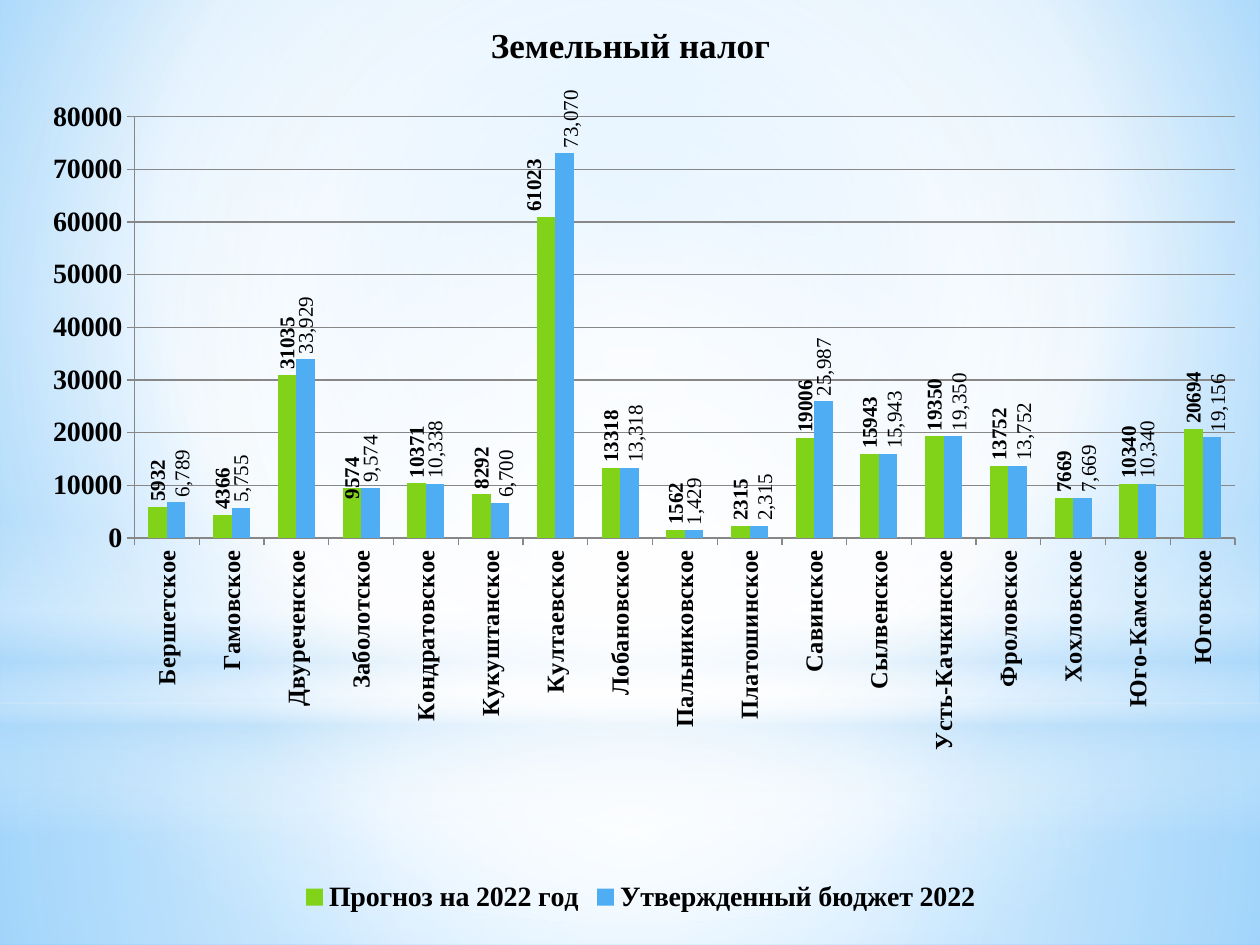
from lxml import etree
from pptx import Presentation, util as u
from pptx.chart.data import CategoryChartData
from pptx.dml.color import RGBColor
from pptx.enum import chart as charts, shapes, text
from pptx.oxml import parse_xml
from pptx.oxml.ns import nsdecls, qn

COLORS = {"ink": "000000", "line": "878787", "forecast": "81D31A", "budget": "4FADF3",
          "white": "FFFFFF", "pale": "B4DCFA", "sky": "9ED5FF", "blue": "5BB9FF"}
CENTER = (50, 50, 50, 50)

SETTLEMENTS = ["Бершетское", "Гамовское", "Двуреченское", "Заболотское", "Кондратовское",
               "Кукуштанское", "Култаевское", "Лобановское", "Пальниковское",
               "Платошинское", "Савинское", "Сылвенское", "Усть-Качкинское",
               "Фроловское", "Хохловское", "Юго-Камское", "Юговское"]
FORECAST = [5932, 4366, 31035, 9574, 10371, 8292, 61023, 13318, 1562, 2315, 19006,
            15943, 19350, 13752, 7669, 10340, 20694]
BUDGET = [6789, 5755, 33929, 9574, 10338, 6700, 73070, 13318, 1429, 2315, 25987,
          15943, 19350, 13752, 7669, 10340, 19156]
# name, values, number format, colour, bold labels, label shifts as shares of the chart
SERIES = [
    ("Прогноз на 2022 год", FORECAST, "0", "forecast", True,
     {3: (0, 0.02), 6: (-0.01, 0)}),
    ("Утвержденный бюджет 2022", BUDGET, "#,##0", "budget", False,
     {i: (0.005, 0) for i in (0, 5, 6, 7, 9, 11, 12, 13, 14, 16)}),
]


def color(name):
    return RGBColor.from_string(COLORS[name])


def set_font(font, size, bold=False, name="Times New Roman", ink="ink"):
    font.size, font.bold, font.name = u.Pt(size), bold, name
    font.color.rgb = color(ink)


def write(box, words, align=text.PP_ALIGN.LEFT, **style):
    box.text_frame.word_wrap = True
    para = box.text_frame.paragraphs[0]
    para.alignment = align
    span = para.add_run()
    span.text = words
    set_font(span.font, **style)


def set_gradient(parent, stops, focus=None):
    """Replace the gradient in parent; focus is the centre of a circular one."""
    marks = "".join(
        f'<a:gs pos="{place * 1000}"><a:srgbClr val="{COLORS[name]}">'
        f'<a:alpha val="{alpha * 1000}"/></a:srgbClr></a:gs>'
        for place, name, alpha in stops)
    if focus:
        sides = " ".join(f'{side}="{share * 1000}"' for side, share in zip("ltrb", focus))
        way = f'<a:path path="circle"><a:fillToRect {sides}/></a:path>'
    else:
        way = '<a:lin ang="5400000" scaled="0"/>'
    old = parent.find(qn("a:gradFill"))
    parent.replace(old, parse_xml(
        f'<a:gradFill {nsdecls("a")} rotWithShape="1"><a:gsLst>{marks}</a:gsLst>{way}</a:gradFill>'))


def manual_layout(x, y, w=None, h=None):
    """Chart layout: a shift with x and y only, an inner plot area with all four."""
    parts = {"x": x, "y": y}
    if w:
        parts = {"layoutTarget": "inner", "xMode": "edge", "yMode": "edge", **parts, "w": w, "h": h}
    layout = parse_xml(f'<c:layout {nsdecls("c")}><c:manualLayout/></c:layout>')
    for tag, value in parts.items():
        etree.SubElement(layout[0], qn(f"c:{tag}")).set("val", str(value))
    return layout


def turn_upright(body):
    body.set("rot", "-5400000")
    body.set("vert", "horz")


class SlideBuilder:
    def __init__(self, deck):
        self.deck = deck
        self.page = deck.slides.add_slide(deck.slide_layouts[6])

    def place(self, left, top, width, height):
        """Turn shares of the slide's size into lengths."""
        across, down = self.deck.slide_width, self.deck.slide_height
        return [u.Emu(round(share * size)) for share, size in
                zip((left, top, width, height), (across, down, across, down))]

    def background(self, stops, focus):
        self.page.background.fill.gradient()
        set_gradient(self.page.element.find(".//" + qn("p:bgPr")), stops, focus)

    def glow(self, kind, area, stops, focus=None):
        shape = self.page.shapes.add_shape(kind, *self.place(*area))
        shape.shadow.inherit = False
        shape.line.fill.background()
        shape.fill.gradient()
        set_gradient(shape.element.spPr, stops, focus)

    def title(self, words, area):
        box = self.page.shapes.add_textbox(*self.place(*area))
        write(box, words, align=text.PP_ALIGN.CENTER, size=20, bold=True)

    def column_chart(self, area):
        data = CategoryChartData()
        data.categories = SETTLEMENTS
        for name, values, number_format, *_ in SERIES:
            data.add_series(name, values, number_format)
        chart = self.page.shapes.add_chart(
            charts.XL_CHART_TYPE.COLUMN_CLUSTERED, *self.place(*area), data).chart
        set_font(chart.font, 18, name="Roboto")
        chart.has_title = False
        chart.has_legend = True
        chart.legend.position = charts.XL_LEGEND_POSITION.BOTTOM
        chart.legend.include_in_layout = False
        set_font(chart.legend.font, 16, bold=True)
        self.style_axes(chart)
        plot = chart.plots[0]
        plot.gap_width, plot.overlap, plot.vary_by_categories = 150, 0, False
        for series, (_, _, number_format, fill, bold, shifts) in zip(plot.series, SERIES):
            series.format.fill.solid()
            series.format.fill.fore_color.rgb = color(fill)
            self.label_series(series, number_format, bold, shifts)
        plot_area = chart.element.find(".//" + qn("c:plotArea"))
        for old in plot_area.findall(qn("c:layout")):
            plot_area.remove(old)
        plot_area.insert(0, manual_layout(0.082, 0.037, 0.909, 0.506))

    def style_axes(self, chart):
        values, names = chart.value_axis, chart.category_axis
        values.minimum_scale, values.maximum_scale, values.major_unit = 0, 80000, 10000
        values.tick_labels.number_format = "0"
        values.tick_labels.number_format_is_linked = False
        values.has_major_gridlines = True
        for axis, size in ((values, 16), (names, 14)):
            axis.major_tick_mark = charts.XL_TICK_MARK.OUTSIDE
            axis.format.line.color.rgb = color("line")
            set_font(axis.tick_labels.font, size, bold=True)
        values.major_gridlines.format.line.color.rgb = color("line")
        turn_upright(names.format.line and chart.element.find(
            ".//" + qn("c:catAx")).find(".//" + qn("a:bodyPr")))

    def label_series(self, series, number_format, bold, shifts):
        labels = series.data_labels
        labels.show_value = True
        labels.number_format = number_format
        labels.number_format_is_linked = False
        point_labels = {i: series.points[i].data_label for i in shifts}
        for label in (labels, *point_labels.values()):
            set_font(label.font, 12, bold=bold)
            label.position = charts.XL_LABEL_POSITION.OUTSIDE_END
        block = series.data_labels.font and series.points and series.format and None
        for dot in plot_labels(series):
            index = int(dot.find(qn("c:idx")).get("val"))
            dot.insert(1, manual_layout(*shifts[index]))
        for body in label_block(series).iter(qn("a:bodyPr")):
            turn_upright(body)


def label_block(series):
    return series._element.find(qn("c:dLbls"))


def plot_labels(series):
    return label_block(series).findall(qn("c:dLbl"))


def main():
    deck = Presentation()
    deck.slide_width, deck.slide_height = u.Inches(10), u.Inches(7.5)
    slide = SlideBuilder(deck)
    rect, oval = shapes.MSO_SHAPE.RECTANGLE, shapes.MSO_SHAPE.OVAL
    slide.background([(0, "sky", 100), (60, "white", 100), (100, "blue", 100)], (20, 10, 20, 60))
    slide.glow(rect, (0, 0.744, 1, 0.256),
               [(0, "white", 91), (37, "white", 76), (100, "pale", 79)], CENTER)
    slide.glow(rect, (0, 0, 1, 0.744),
               [(0, "white", 89), (48, "white", 62), (100, "pale", 79)], CENTER)
    slide.glow(rect, (0, 0.55, 1, 0.333),
               [(0, "white", 0), (29, "white", 30), (45, "pale", 40),
                (55, "white", 26), (65, "pale", 60), (100, "white", 0)])
    slide.glow(oval, (0, 0.233, 1, 0.744), [(0, "white", 100), (56, "white", 0)], CENTER)
    slide.column_chart((0.028, 0.091, 0.961, 0.881))
    slide.title("Земельный налог", (0.02, 0.018, 0.961, 0.084))
    deck.save("out.pptx")


if __name__ == "__main__":
    main()
